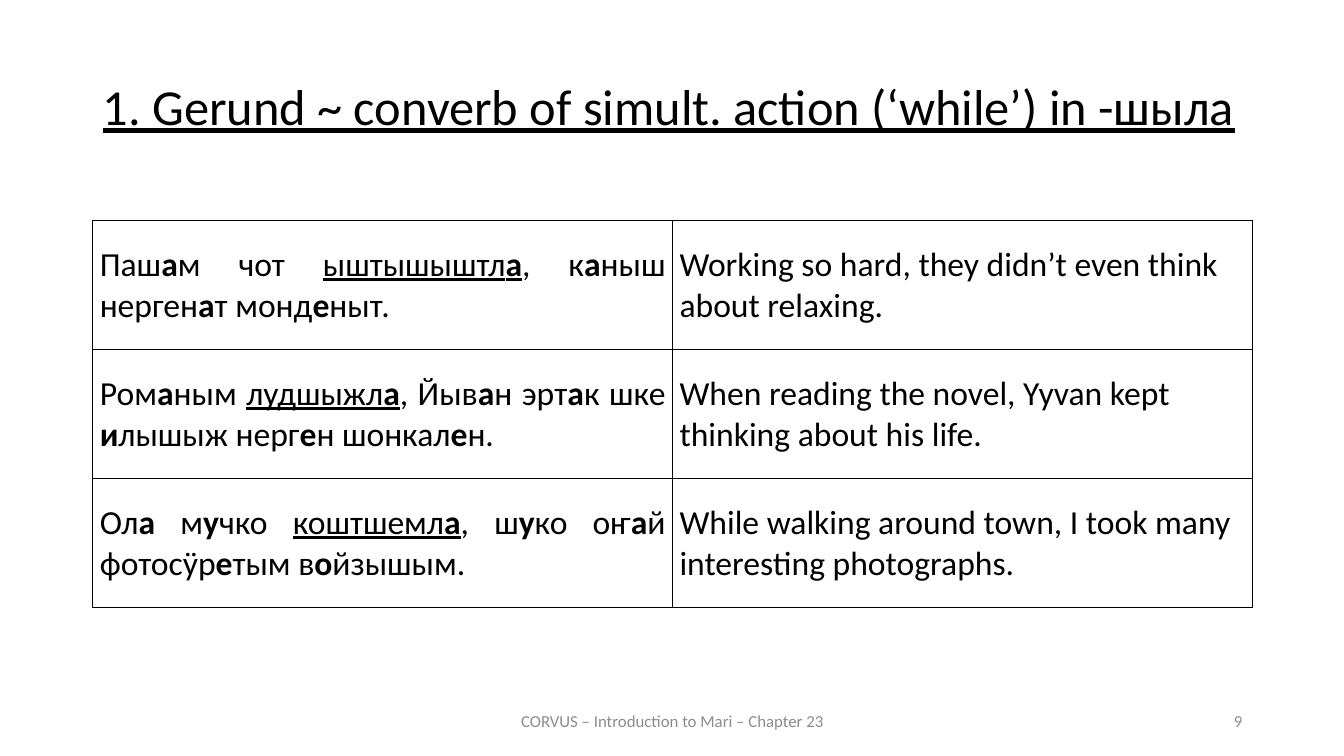
from lxml.etree import SubElement
from pptx import Presentation
from pptx.dml.color import RGBColor
from pptx.enum.text import MSO_ANCHOR as Anchor, PP_ALIGN as Align
from pptx.oxml.ns import qn
from pptx.util import Inches, Pt

BLACK = RGBColor(0x00, 0x00, 0x00)
GRAY = RGBColor(0x8C, 0x8C, 0x8C)
FONT = "Calibri"
LEFT, WIDTH = 0.92, 11.5
ROW = 1.28

TITLE = "_1. Gerund ~ converb of simult. action (‘while’) in -шыла_"
PAIRS = [
    ("Паш*а*м чот _ыштышыштл*а*_, к*а*ныш нерген*а*т монд*е*ныт.",
     "Working so hard, they didn’t even think about relaxing."),
    ("Ром*а*ным _лудшыжл*а*_, Йыв*а*н эрт*а*к шке *и*лышыж нерг*е*н шонкал*е*н.",
     "When reading the novel, Yyvan kept thinking about his life."),
    ("Ол*а* м*у*чко _коштшемл*а*_, ш*у*ко оҥ*а*й фотосӱр*е*тым в*о*йзышым.",
     "While walking around town, I took many interesting photographs."),
]


def add_runs(para, text, size, color, align):
    """Underscores enclose underlined text, asterisks enclose bold text."""
    para.alignment = align
    for i, part in enumerate(text.split("_")):
        for j, piece in enumerate(part.split("*")):
            if not piece:
                continue
            run = para.add_run()
            run.text = piece
            font = run.font
            font.name, font.size = FONT, Pt(size)
            font.color.rgb = color
            font.underline = i % 2 == 1
            font.bold = j % 2 == 1


def add_text(slide, box, text, size, color, align, anchor):
    frame = slide.shapes.add_textbox(*map(Inches, box)).text_frame
    frame.word_wrap = True
    frame.vertical_anchor = anchor
    para = frame.paragraphs[0]
    add_runs(para, text, size, color, align)
    return para


def add_border(cell):
    props = cell._tc.get_or_add_tcPr()
    for side in ("a:lnL", "a:lnR", "a:lnT", "a:lnB"):
        line = SubElement(props, qn(side), w=str(Pt(1)))
        fill = SubElement(line, qn("a:solidFill"))
        SubElement(fill, qn("a:srgbClr"), val=str(BLACK))


def fill_cell(cell, text, align):
    add_border(cell)
    cell.fill.background()
    cell.vertical_anchor = Anchor.MIDDLE
    cell.margin_left = cell.margin_right = Inches(0.07)
    cell.margin_top = cell.margin_bottom = 0
    add_runs(cell.text_frame.paragraphs[0], text, 24, BLACK, align)


def add_pairs(slide):
    box = (LEFT, 2.19, WIDTH, ROW * len(PAIRS))
    table = slide.shapes.add_table(len(PAIRS), 2, *map(Inches, box)).table
    table.first_row = table.horz_banding = False
    for col in table.columns:
        col.width = Inches(WIDTH / 2)
    for i, (mari, gloss) in enumerate(PAIRS):
        table.rows[i].height = Inches(ROW)
        fill_cell(table.cell(i, 0), mari, Align.JUSTIFY)
        fill_cell(table.cell(i, 1), gloss, Align.LEFT)


def main():
    prs = Presentation()
    prs.slide_width, prs.slide_height = Inches(13.33), Inches(7.5)
    slide = prs.slides.add_slide(prs.slide_layouts[6])
    title = add_text(slide, (LEFT, 0.76, WIDTH, 0.83), TITLE, 36, BLACK,
                     Align.JUSTIFY, Anchor.TOP)
    title.line_spacing = 0.9
    title.space_before = Pt(12)
    add_text(slide, (4.42, 6.95, 4.5, 0.4),
             "CORVUS – Introduction to Mari – Chapter 23", 12, GRAY,
             Align.CENTER, Anchor.MIDDLE)
    add_text(slide, (9.42, 6.95, 3, 0.4), "9", 12, GRAY,
             Align.RIGHT, Anchor.MIDDLE)
    add_pairs(slide)
    prs.save("out.pptx")


if __name__ == "__main__":
    main()
